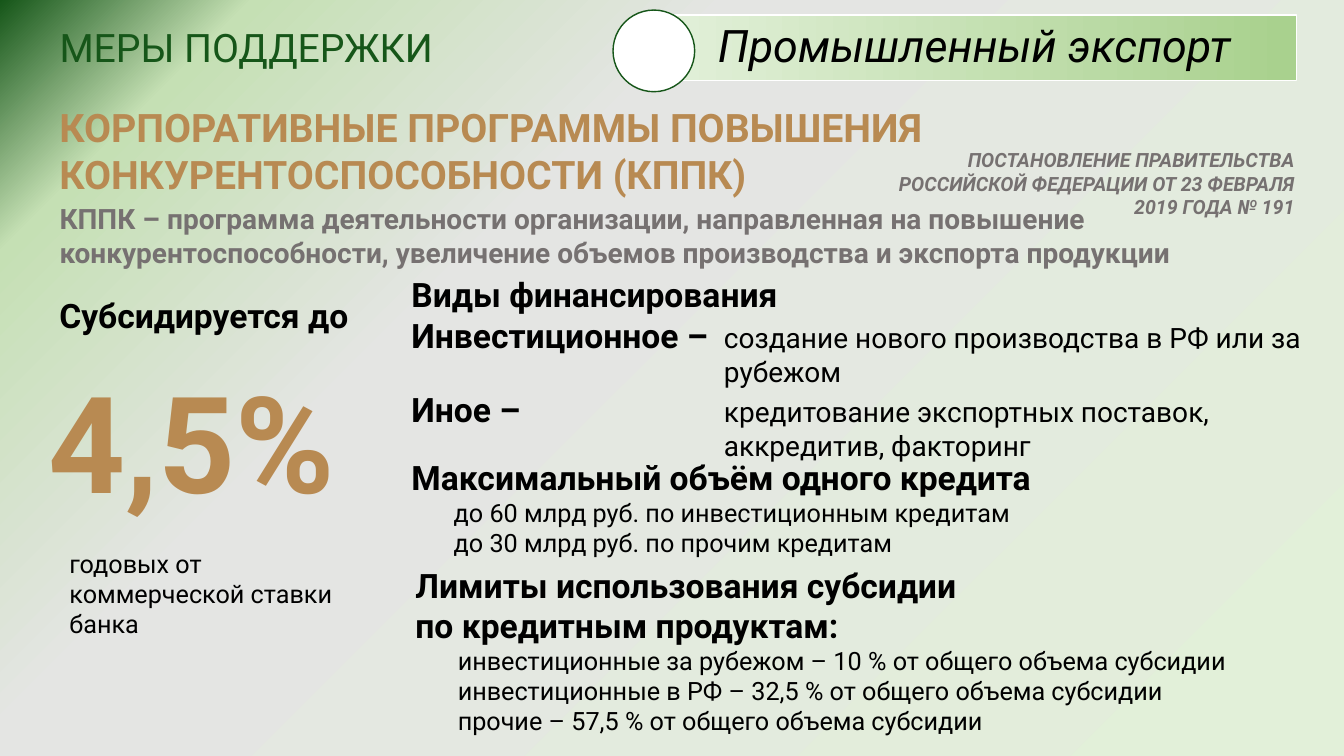
from lxml.etree import SubElement
from pptx import Presentation
from pptx.dml.color import RGBColor
from pptx.enum.shapes import MSO_SHAPE as SHAPE
from pptx.enum.text import MSO_ANCHOR as ANCHOR, MSO_AUTO_SIZE as AUTO, PP_ALIGN as ALIGN
from pptx.oxml.ns import qn
from pptx.util import Inches, Pt

FONT = "Roboto"
GREEN = RGBColor(0x16, 0x56, 0x19)
LEAF = RGBColor(0xA9, 0xD1, 0x8E)
LIME = RGBColor(0xC5, 0xE0, 0xB4)
MINT = RGBColor(0xE2, 0xF0, 0xD9)
MIST = RGBColor(0xE4, 0xE5, 0xE3)
GOLD = RGBColor(0xB8, 0x8A, 0x52)
GREY = RGBColor(0x76, 0x71, 0x71)
BLACK = RGBColor(0, 0, 0)
WHITE = RGBColor(0xFF, 0xFF, 0xFF)

INSET = (0.1, 0.05, 0.1, 0.05)
STEP = 0.42  # indent of list items
HANG = 3.1   # column where the kinds of financing are explained


def blend(fill, root, angle, stops):
    """Fill with a gradient of (percent, colour) stops."""
    fill.gradient()
    fill.gradient_angle = angle
    group = next(root.iter(qn("a:gsLst")))
    for old in list(group):
        group.remove(old)
    for place, color in stops:
        stop = SubElement(group, qn("a:gs"), pos=str(place * 1000))
        SubElement(stop, qn("a:srgbClr"), val=str(color))


def frame(shape, inset=INSET, anchor=ANCHOR.TOP):
    text = shape.text_frame
    text.word_wrap = True
    text.auto_size = AUTO.NONE
    text.vertical_anchor = anchor
    text.margin_left, text.margin_top, text.margin_right, text.margin_bottom = map(Inches, inset)
    return text


def place(shape, box):
    shape.left, shape.top, shape.width, shape.height = map(Inches, box)
    return shape


def add_run(para, words, size, color=BLACK, bold=False, italic=False):
    run = para.add_run()
    run.text = words
    font = run.font
    font.name, font.size, font.bold, font.italic = FONT, Pt(size), bold, italic
    font.color.rgb = color


def add_para(text, first, left=0, hang=0):
    """Return a paragraph without bullet, indented in inches."""
    para = text.paragraphs[0] if first else text.add_paragraph()
    para.alignment = ALIGN.LEFT
    para.space_before = Pt(0)
    props = para._p.get_or_add_pPr()
    props.set("marL", str(Inches(left)))
    props.set("indent", str(-Inches(hang)))
    SubElement(props, qn("a:buNone"))
    return para


def add_note(slide, box, words, size, color=BLACK, bold=False, italic=False, align=ALIGN.LEFT):
    text = frame(slide.shapes.add_textbox(*map(Inches, box)))
    para = text.paragraphs[0]
    para.alignment = align
    add_run(para, words, size, color, bold, italic)


def draw_head(slide, title):
    place(title, (0.59, 0.23, 3.84, 0.61))
    text = frame(title, (0, 0, 0, 0))
    add_run(add_para(text, True), "МЕРЫ ПОДДЕРЖКИ", 28, GREEN)


def draw_badge(slide, box):
    """Ribbon with the topic and a round seal at its left end."""
    left, top, width, height = box
    band = slide.shapes.add_shape(SHAPE.RECTANGLE, *map(Inches, box))
    blend(band.fill, band.element, 0, [(0, MINT), (98, LEAF)])
    text = frame(band, (0.52, 0.09, 0.09, 0.09), ANCHOR.MIDDLE)
    para = add_para(text, True)
    para.line_spacing = 0.9
    add_run(para, "Промышленный экспорт", 32, italic=True)
    seal = slide.shapes.add_shape(
        SHAPE.OVAL, *map(Inches, (left - 0.52, top - 0.05, 0.81, 0.81)))
    seal.fill.solid()
    seal.fill.fore_color.rgb = WHITE
    for shape, color in ((band, WHITE), (seal, GREEN)):
        shape.shadow.inherit = False
        shape.line.color.rgb = color
        shape.line.width = Pt(1)


def draw_intro(slide, body, box):
    left, top, width, height = box
    add_note(slide, (left, top, 11.57, 1),
             "КОРПОРАТИВНЫЕ ПРОГРАММЫ ПОВЫШЕНИЯ КОНКУРЕНТОСПОСОБНОСТИ (КППК)", 28, GOLD, True)
    add_note(slide, (left + 8.15, top + 0.44, 4.3, 0.8),
             "ПОСТАНОВЛЕНИЕ ПРАВИТЕЛЬСТВА РОССИЙСКОЙ ФЕДЕРАЦИИ ОТ 23 ФЕВРАЛЯ 2019 ГОДА № 191",
             14, GREY, True, True, ALIGN.RIGHT)
    place(body, (left, top + 0.97, width, height - 0.97))
    add_run(add_para(frame(body), True),
            "КППК – программа деятельности организации, направленная на повышение "
            "конкурентоспособности, увеличение объемов производства и экспорта продукции",
            20, GREY, True)


def draw_rate(slide, box):
    left, top, width, height = box
    add_note(slide, (left + 0.11, top, 3.2, 0.5), "Субсидируется до", 24, bold=True)
    add_note(slide, (left, top + 0.63, width, 1.72), "4,5%", 96, GOLD, True)
    add_note(slide, (left + 0.21, top + 2.51, 3.01, 1.01),
             "годовых от коммерческой ставки банка", 18)


def draw_kinds(body, box):
    text = frame(place(body, box))
    add_run(add_para(text, True), "Виды финансирования", 24, bold=True)
    for kind, words in (
            ("Инвестиционное –", "создание нового производства в РФ или за рубежом"),
            ("Иное –", "кредитование экспортных поставок, аккредитив, факторинг")):
        para = add_para(text, False, HANG, HANG)
        add_run(para, kind + "\t", 24, bold=True)
        add_run(para, words, 20)


def draw_list(body, box, heads, items):
    text = frame(place(body, box))
    for i, words in enumerate(heads):
        add_run(add_para(text, i == 0), words, 24, bold=True)
    for words in items:
        add_run(add_para(text, False, STEP), words, 18)


def main():
    deck = Presentation()
    deck.slide_width, deck.slide_height = Inches(13.33), Inches(7.5)
    slide = deck.slides.add_slide(deck.slide_layouts.get_by_name("Comparison"))
    blend(slide.background.fill, slide.element, 315,
          [(0, GREEN), (12, LIME), (35, MIST), (100, MINT)])
    title, intro, kinds, credit, limits = slide.placeholders
    draw_head(slide, title)
    draw_badge(slide, (6.6, 0.15, 6.26, 0.65))
    draw_intro(slide, intro, (0.49, 0.98, 12.58, 1.74))
    draw_rate(slide, (0.38, 2.88, 3.43, 3.52))
    draw_kinds(kinds, (3.98, 2.67, 9.2, 1.99))
    draw_list(credit, (3.98, 4.48, 9.2, 1.11),
              ["Максимальный объём одного кредита"],
              ["до 60 млрд руб. по инвестиционным кредитам",
               "до 30 млрд руб. по прочим кредитам"])
    draw_list(limits, (4.02, 5.55, 9.16, 1.82),
              ["Лимиты использования субсидии", "по кредитным продуктам:"],
              ["инвестиционные за рубежом – 10 % от общего объема субсидии",
               "инвестиционные в РФ – 32,5 % от общего объема субсидии",
               "прочие – 57,5 % от общего объема субсидии"])
    deck.save("out.pptx")


if __name__ == "__main__":
    main()
